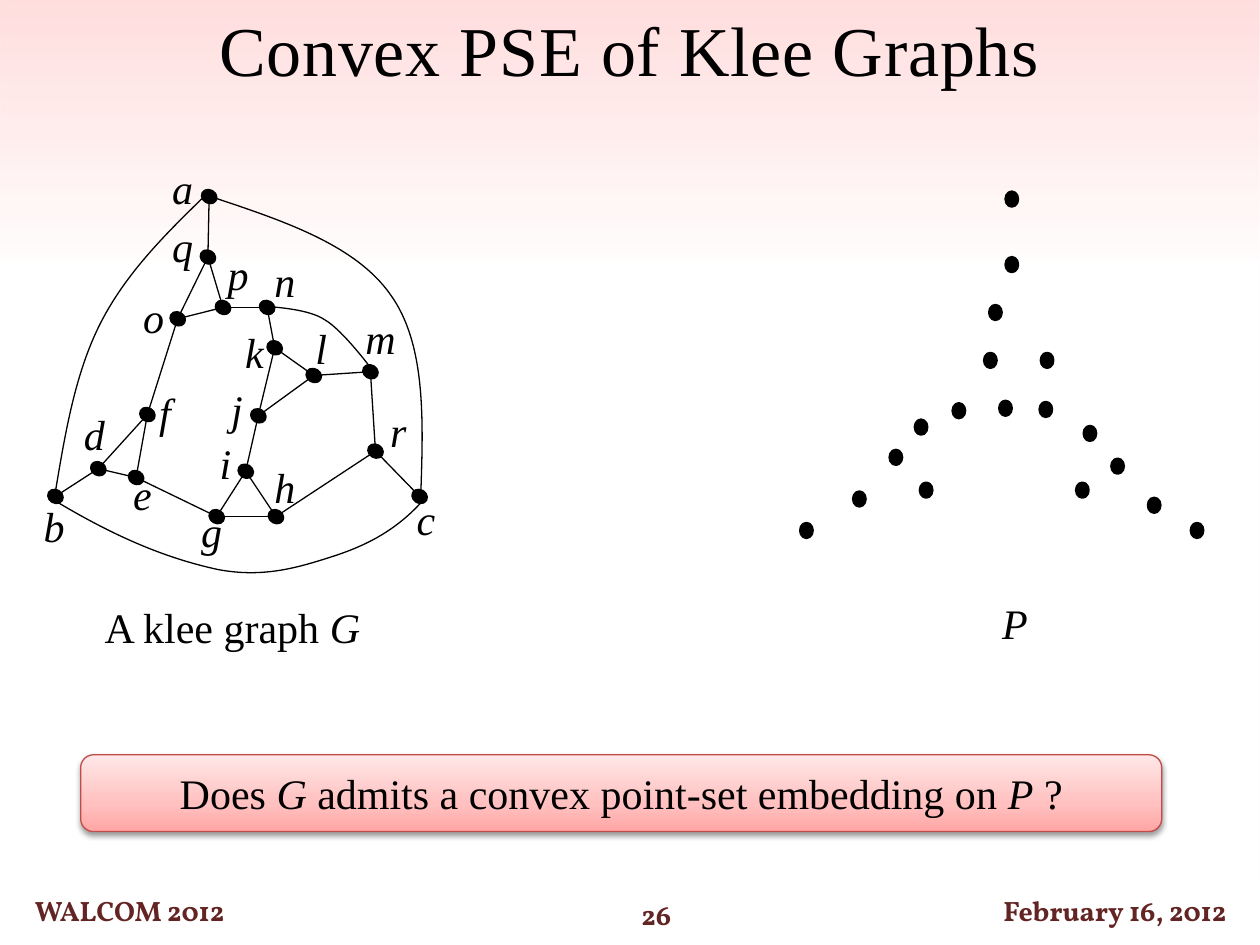
from lxml.etree import SubElement
from pptx import Presentation
from pptx.dml.color import RGBColor
from pptx.enum.shapes import MSO_CONNECTOR, MSO_SHAPE
from pptx.enum.text import MSO_ANCHOR, MSO_AUTO_SIZE, PP_ALIGN
from pptx.oxml.ns import qn
from pptx.util import Inches, Pt

COLORS = {"ink": "000000", "footer": "632523", "callout line": "BF4C48"}
# Gradient stops run from bottom to top: position, colour, opacity (percent).
BAND_STOPS = [(0, "FF0000", 0), (45, "FF0000", 0), (70, "FF0300", 0), (100, "FF0000", 13)]
CALLOUT_STOPS = [(0, "FFA6A5", 100), (35, "FFC0BF", 100), (100, "FFE7E7", 100)]

TITLE = "Convex PSE of Klee Graphs"
BODY = {"name": "Times New Roman", "size": Pt(24), "bold": False}
FOOTER = {"name": "Vollkorn", "size": Pt(16), "bold": True}

# Box (left, top, width, height) and runs (text, italic).
CAPTIONS = [
    ((0.13, 4.51, 3.43, 0.93), [("A klee graph ", False), ("G", True)]),
    ((6.34, 4.48, 3.43, 0.93), [("P", True)]),
]
FOOTERS = [
    ((0, 7.05, 2.06, 0.35), "WALCOM 2012"),
    ((4.18, 7.08, 2.06, 0.35), "26"),
    ((7.7, 7.05, 2.3, 0.35), "February 16, 2012"),
]
CALLOUT_BOX = (0.64, 5.99, 8.58, 0.61)
CALLOUT = [("Does ", False), ("G", True),
           (" admits a convex point-set embedding on ", False), ("P", True), (" ?", False)]

# Vertex name: (centre of dot), (centre of label).
VERTICES = {
    "a": ((1.66, 1.56), (1.45, 1.49)), "b": ((0.44, 3.94), (0.43, 4.17)),
    "c": ((3.33, 3.94), (3.38, 4.12)), "d": ((0.78, 3.72), (0.75, 3.44)),
    "e": ((1.08, 3.79), (1.13, 3.92)), "f": ((1.17, 3.29), (1.31, 3.27)),
    "g": ((1.72, 4.10), (1.68, 4.21)), "h": ((2.19, 4.10), (2.26, 3.86)),
    "i": ((1.95, 3.74), (1.79, 3.67)), "j": ((2.05, 3.30), (1.88, 3.24)),
    "k": ((2.18, 2.76), (2.02, 2.79)), "l": ((2.49, 2.98), (2.55, 2.76)),
    "m": ((2.94, 2.95), (3.02, 2.68)), "n": ((2.12, 2.44), (2.26, 2.23)),
    "o": ((1.41, 2.53), (1.22, 2.51)), "p": ((1.77, 2.44), (1.89, 2.17)),
    "q": ((1.65, 2.04), (1.45, 1.95)), "r": ((2.98, 3.58), (3.16, 3.42)),
}
EDGES = "aq qo qp op pn nk kl kj lm lj ji ig ih gh ge ef ed df db fo mr rc rh".split()
# Start point followed by three Bezier points per segment.
CURVED_EDGES = [
    [(0.44, 3.9), (0.52, 3.42), (0.6, 2.95), (0.8, 2.56),
     (1, 2.17), (1.31, 1.86), (1.63, 1.55)],
    [(3.34, 3.92), (3.36, 3.33), (3.38, 2.73), (3.1, 2.34),
     (2.82, 1.94), (2.24, 1.75), (1.67, 1.56)],
    [(3.35, 3.98), (3.15, 4.2), (2.93, 4.32), (2.66, 4.41), (2.38, 4.5), (2.1, 4.59),
     (1.73, 4.52), (1.36, 4.44), (0.96, 4.29), (0.43, 3.97)],
    [(2.11, 2.43), (2.17, 2.44), (2.45, 2.45), (2.58, 2.54),
     (2.72, 2.62), (2.95, 2.93), (2.95, 2.93)],
]
POINT_SET = [
    (8.03, 1.58), (8.03, 2.10), (7.90, 2.48), (7.86, 2.86), (8.31, 2.86), (7.61, 3.26),
    (7.98, 3.24), (8.30, 3.25), (7.31, 3.39), (8.65, 3.44), (7.11, 3.63), (8.87, 3.70),
    (7.35, 3.89), (8.59, 3.89), (6.82, 3.96), (9.16, 4.01), (6.40, 4.21), (9.50, 4.21),
]
DOT = (0.09, 0.11)
LABEL = (0.38, 0.28)


def color(name):
    return RGBColor.from_string(COLORS[name])


def centred(point, size):
    return (point[0] - size[0] / 2, point[1] - size[1] / 2, *size)


def set_line(shape, name="ink", width=0.75):
    shape.line.color.rgb = color(name)
    shape.line.width = Pt(width)


def add_box(slide, box, kind=MSO_SHAPE.ROUNDED_RECTANGLE):
    """Add a preset shape without fill, line or shadow."""
    shape = slide.shapes.add_shape(kind, *map(Inches, box))
    shape.shadow.inherit = False
    shape.fill.background()
    shape.line.fill.background()
    return shape


def write(shape, runs, font_format=BODY, color_name="ink"):
    frame = shape.text_frame
    settings = {"word_wrap": True, "auto_size": MSO_AUTO_SIZE.NONE,
                "vertical_anchor": MSO_ANCHOR.MIDDLE, "margin_left": 0, "margin_right": 0,
                "margin_top": 0, "margin_bottom": 0}
    for name, value in settings.items():
        setattr(frame, name, value)
    paragraph = frame.paragraphs[0]
    paragraph.alignment = PP_ALIGN.CENTER
    for text, italic in runs:
        run = paragraph.add_run()
        run.text = text
        for name, value in {**font_format, "italic": italic}.items():
            setattr(run.font, name, value)
        run.font.color.rgb = color(color_name)


def add_color(parent, value, opacity):
    element = SubElement(parent, qn("a:srgbClr"), val=value)
    SubElement(element, qn("a:alpha"), val=str(opacity * 1000))


def fill_upward(shape, stops):
    shape.fill.gradient()
    gradient = shape.element.spPr.find(qn("a:gradFill"))
    for child in list(gradient):
        gradient.remove(child)
    stop_list = SubElement(gradient, qn("a:gsLst"))
    for position, value, opacity in stops:
        add_color(SubElement(stop_list, qn("a:gs"), pos=str(position * 1000)), value, opacity)
    SubElement(gradient, qn("a:lin"), ang=str(270 * 60000), scaled="0")


def add_edge(slide, start, end):
    edge = slide.shapes.add_connector(MSO_CONNECTOR.STRAIGHT, *map(Inches, (*start, *end)))
    set_line(edge)
    SubElement(edge.element.spPr, qn("a:effectLst"))


def add_curve(slide, points):
    """Draw a freeform whose line segments are regrouped as cubic Bezier segments."""
    start, *others = [(Inches(x), Inches(y)) for x, y in points]
    builder = slide.shapes.build_freeform(*start)
    builder.add_line_segments(others, close=False)
    curve = builder.convert_to_shape()
    curve.shadow.inherit = False
    curve.fill.background()
    set_line(curve)
    outline = next(curve.element.iter(qn("a:path")))
    segments = outline.findall(qn("a:lnTo"))
    for first in range(0, len(segments), 3):
        bezier = SubElement(outline, qn("a:cubicBezTo"))
        for segment in segments[first:first + 3]:
            bezier.append(segment[0])
            outline.remove(segment)


def add_dot(slide, centre, rotation=0):
    dot = add_box(slide, centred(centre, DOT), MSO_SHAPE.OVAL)
    dot.rotation = rotation
    dot.fill.solid()
    dot.fill.fore_color.rgb = color("ink")
    set_line(dot, width=2)


def add_callout(slide):
    callout = add_box(slide, CALLOUT_BOX)
    fill_upward(callout, CALLOUT_STOPS)
    set_line(callout, "callout line")
    effects = callout.element.spPr.find(qn("a:effectLst"))
    shadow = SubElement(effects, qn("a:outerShdw"), blurRad=str(Pt(3.1)), dist=str(Pt(1.6)),
                        dir=str(90 * 60000), rotWithShape="0")
    add_color(shadow, COLORS["ink"], 38)
    write(callout, CALLOUT)


def main():
    presentation = Presentation()
    presentation.slide_width, presentation.slide_height = Inches(10), Inches(7.5)
    slide = presentation.slides.add_slide(presentation.slide_layouts[5])

    title = slide.shapes.title
    title.left, title.top, title.width, title.height = map(Inches, (0, 0, 10, 0.77))
    write(title, [(TITLE, False)], {**BODY, "size": Pt(40)})
    title.text_frame.paragraphs[0].runs[0].font._element.set("spc", "50")

    band = add_box(slide, (0, 0, 10, 7.01), MSO_SHAPE.RECTANGLE)
    fill_upward(band, BAND_STOPS)
    title.element.addprevious(band.element)

    for box, text in FOOTERS:
        write(add_box(slide, box), [(text, False)], FOOTER, "footer")
    for box, runs in CAPTIONS:
        write(add_box(slide, box), runs)

    for start, end in EDGES:
        add_edge(slide, VERTICES[start][0], VERTICES[end][0])
    for points in CURVED_EDGES:
        add_curve(slide, points)
    for name, (centre, label_centre) in VERTICES.items():
        add_dot(slide, centre, rotation=120.9)
        label = slide.shapes.add_textbox(*map(Inches, centred(label_centre, LABEL)))
        write(label, [(name, True)])
    for point in POINT_SET:
        add_dot(slide, point)

    add_callout(slide)
    presentation.save("out.pptx")


if __name__ == "__main__":
    main()
